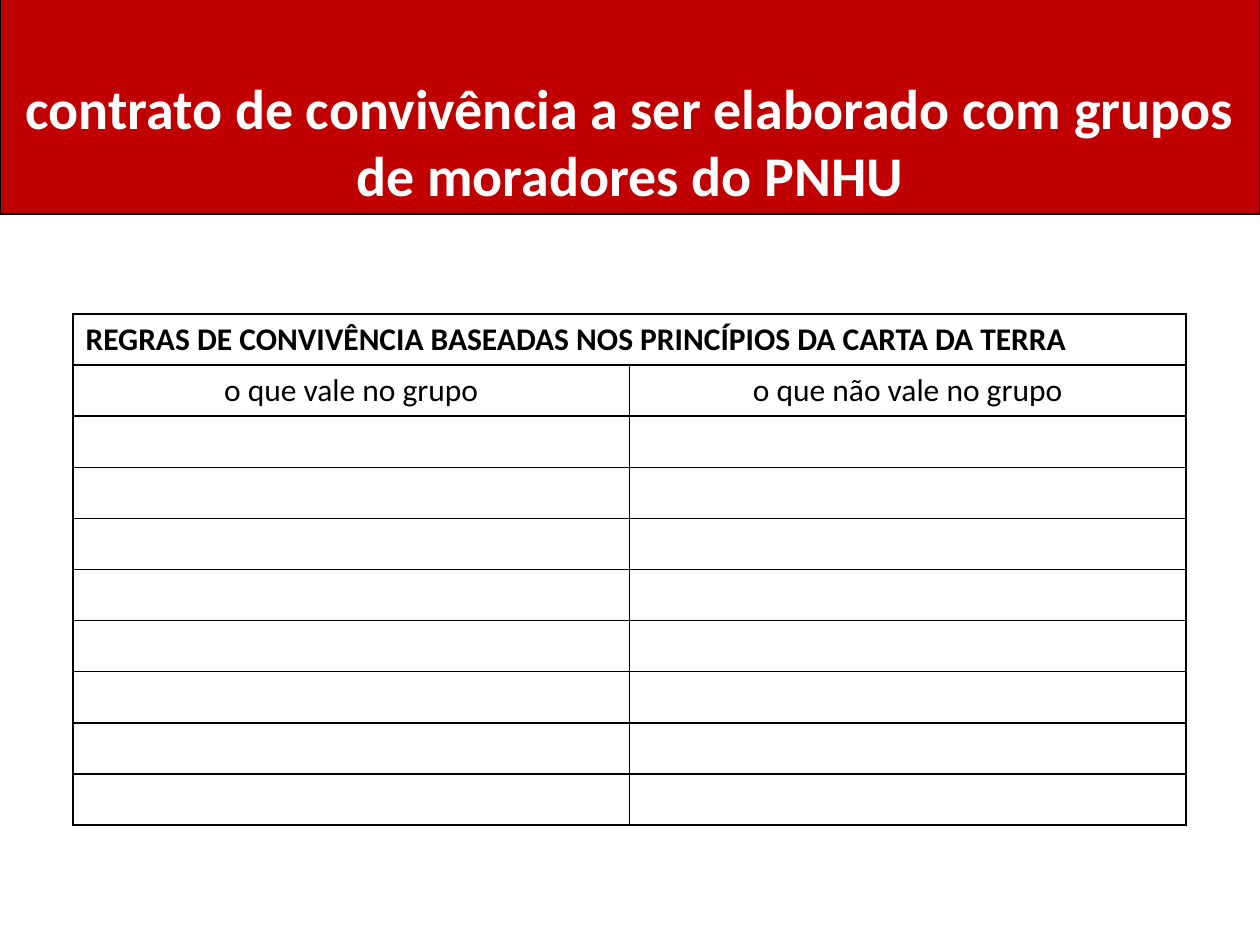
from lxml.etree import SubElement as Sub
from pptx import Presentation
from pptx.dml.color import RGBColor as Rgb
from pptx.enum.text import MSO_ANCHOR as Anchor, MSO_AUTO_SIZE as Fit, PP_ALIGN as Align
from pptx.oxml.ns import qn
from pptx.util import Emu, Pt

TITLE = "contrato de convivência a ser elaborado com grupos de moradores do PNHU"
HEAD = "REGRAS DE CONVIVÊNCIA BASEADAS NOS PRINCÍPIOS DA CARTA DA TERRA"
COLS = ["o que vale no grupo", "o que não vale no grupo"]
BLANK = 8
HEX = {"red": "C00000", "black": "000000", "white": "FFFFFF"}


def px(n):
    return Emu(round(n * 914400 / 126))


def tint(name):
    return Rgb.from_string(HEX[name])


def write(frame, text, size=18, color="black", bold=False, align=Align.LEFT):
    para = frame.paragraphs[0]
    para.alignment = align
    run = para.add_run()
    run.text = text
    font = run.font
    font.name, font.size, font.bold = "Calibri", Pt(size), bold
    font.color.rgb = tint(color)


def border(cell):
    props = cell._tc.get_or_add_tcPr()
    for spot, side in enumerate(("lnL", "lnR", "lnT", "lnB")):
        line = Sub(props, qn(f"a:{side}"), w=str(Pt(1)))
        fill = Sub(line, qn("a:solidFill"))
        Sub(fill, qn("a:srgbClr"), val=HEX["black"])
        props.insert(spot, line)


def add_title(slide):
    box = slide.shapes.title
    box.left, box.top, box.width, box.height = px(0), px(-1), px(1260), px(215)
    box.fill.solid()
    box.fill.fore_color.rgb = tint("red")
    box.line.color.rgb = tint("black")
    box.line.width = Pt(0.75)
    frame = box.text_frame
    frame.word_wrap = True
    frame.auto_size = Fit.NONE
    frame.vertical_anchor = Anchor.BOTTOM
    write(frame, TITLE, size=32, color="white", bold=True, align=Align.CENTER)


def add_rules(slide):
    rows = BLANK + 2
    row_h, col_w = 51, 556.5
    grid = slide.shapes.add_table(rows, len(COLS), px(73), px(314),
                                  px(col_w * len(COLS)), px(row_h * rows)).table
    grid.first_row = grid.horz_banding = False
    for row in grid.rows:
        row.height = px(row_h)
    for col in grid.columns:
        col.width = px(col_w)
    for cell in grid.iter_cells():
        cell.fill.background()
        border(cell)
    grid.cell(0, 0).merge(grid.cell(0, len(COLS) - 1))
    write(grid.cell(0, 0).text_frame, HEAD, bold=True)
    for i, text in enumerate(COLS):
        write(grid.cell(1, i).text_frame, text, align=Align.CENTER)


def main():
    deck = Presentation()
    deck.slide_width, deck.slide_height = px(1260), px(945)
    slide = deck.slides.add_slide(deck.slide_layouts[5])
    add_title(slide)
    add_rules(slide)
    deck.save("out.pptx")


if __name__ == "__main__":
    main()
